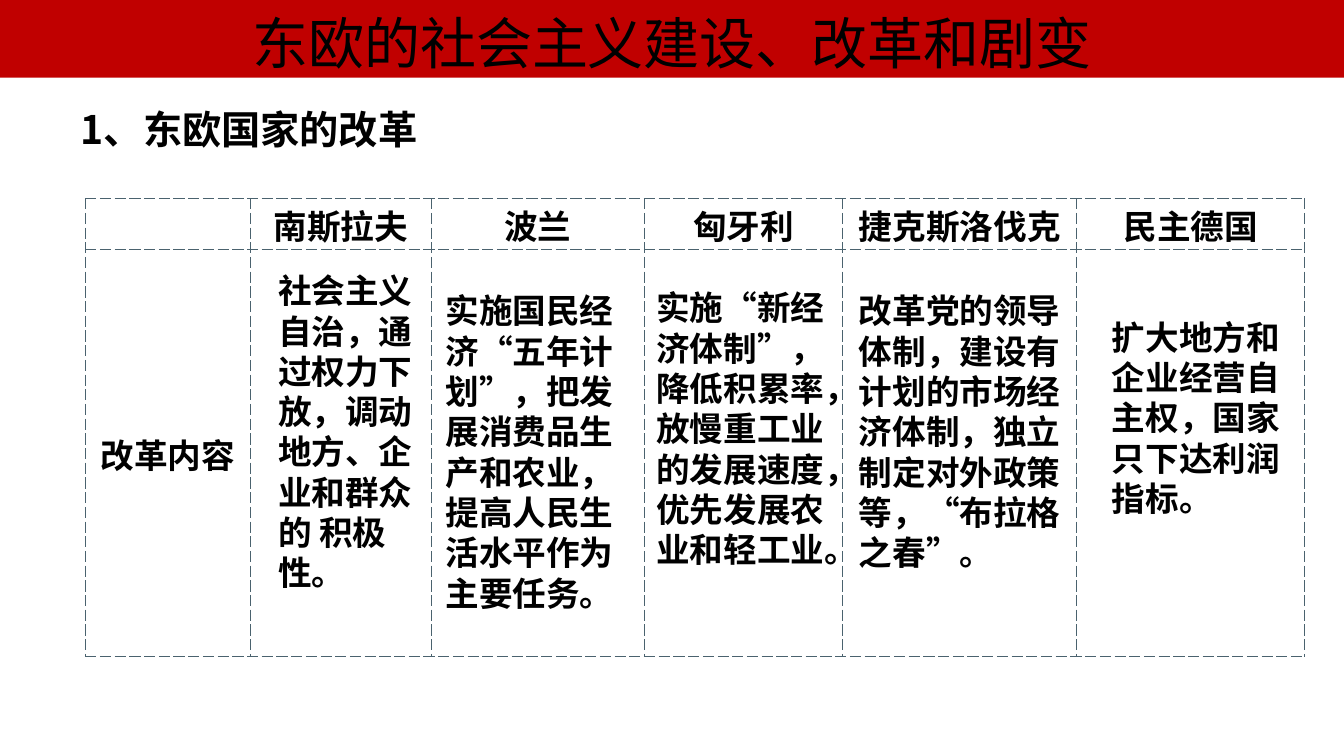
from dataclasses import dataclass
from lxml import etree
from pptx import Presentation
from pptx.dml.color import RGBColor as Rgb
from pptx.enum.shapes import MSO_SHAPE as Shape
from pptx.enum.text import MSO_ANCHOR as Anchor, PP_ALIGN as Align
from pptx.oxml.ns import qn
from pptx.util import Pt

SCALE = 9144  # EMU per px, 100 px to the inch


@dataclass(frozen=True)
class Theme:
    font: str = "Noto Sans CJK SC"
    ink: str = "000000"
    band: str = "C00000"
    paper: str = "FFFFFF"
    rule: str = "4A626E"
    title: int = 40
    head: int = 28
    body: int = 24
    lead: float = 1.2


def px(num):
    return num * SCALE


class Deck:
    def __init__(self, theme):
        self.theme = theme
        self.prs = Presentation()
        self.prs.slide_width, self.prs.slide_height = px(1333), px(750)
        self.slide = self.prs.slides.add_slide(self.prs.slide_layouts[6])

    def label(self, frame, words, size, bold=True, align=Align.CENTER):
        para = frame.paragraphs[0]
        para.alignment = align
        para.line_spacing = Pt(size * self.theme.lead)
        run = para.add_run()
        run.text = words
        font = run.font
        font.size, font.bold = Pt(size), bold
        font.color.rgb = Rgb.from_string(self.theme.ink)
        font.name = self.theme.font
        east = etree.SubElement(font._element, qn("a:ea"))
        east.set("typeface", self.theme.font)

    def inset(self, frame):
        frame.word_wrap = True
        frame.vertical_anchor = Anchor.TOP
        frame.margin_left = frame.margin_right = px(10)
        frame.margin_top, frame.margin_bottom = px(8), px(2)

    def text(self, box, words, size, align=Align.LEFT):
        frame = self.slide.shapes.add_textbox(*map(px, box)).text_frame
        self.inset(frame)
        self.label(frame, words, size, align=align)

    def band(self, box, words):
        bar = self.slide.shapes.add_shape(Shape.RECTANGLE, *map(px, box))
        bar.shadow.inherit = False
        bar.fill.solid()
        bar.fill.fore_color.rgb = Rgb.from_string(self.theme.band)
        bar.line.fill.background()
        self.inset(bar.text_frame)
        self.label(bar.text_frame, words, self.theme.title, bold=False)

    def edge(self, cell):
        props = cell._tc.get_or_add_tcPr()
        for spot, side in enumerate("LRTB"):
            line = etree.Element(qn(f"a:ln{side}"), w=str(Pt(0.75)))
            fill = etree.SubElement(line, qn("a:solidFill"))
            etree.SubElement(fill, qn("a:srgbClr"), val=self.theme.rule)
            etree.SubElement(line, qn("a:prstDash"), val="sysDash")
            props.insert(spot, line)

    def table(self, left, top, cols, rows, cells):
        grid = self.slide.shapes.add_table(
            len(rows), len(cols), px(left), px(top),
            px(sum(cols)), px(sum(rows))).table
        grid.first_row = grid.horz_banding = False
        for col, wide in zip(grid.columns, cols):
            col.width = px(wide)
        for row, high in zip(grid.rows, rows):
            row.height = px(high)
        for cell in grid.iter_cells():
            cell.fill.solid()
            cell.fill.fore_color.rgb = Rgb.from_string(self.theme.paper)
            cell.margin_top, cell.margin_bottom = px(10), 0
            self.edge(cell)
        for (row, col), words in cells.items():
            cell = grid.cell(row, col)
            cell.vertical_anchor = Anchor.MIDDLE if row else Anchor.TOP
            self.label(cell.text_frame, words, self.theme.body)


def main():
    theme = Theme()
    deck = Deck(theme)

    # Section heading
    deck.text((41, 97, 412, 57), "1、东欧国家的改革", theme.head, Align.CENTER)

    # Reform table
    lands = ["南斯拉夫", "波兰", "匈牙利", "捷克斯洛伐克", "民主德国"]
    cells = {(0, col): land for col, land in enumerate(lands, 1)}
    cells[1, 0] = "改革内容"
    deck.table(85, 197, [163, 180, 211, 197, 232, 226], [50, 404], cells)

    # Title band
    deck.band((0, 0, 1333, 77), "东欧的社会主义建设、改革和剧变")

    # Reforms of each country
    notes = [
        ((266, 260, 154, 373),
         "社会主义自治，通过权力下放，调动地方、企业和群众的 积极性。"),
        ((432, 280, 195, 333),
         "实施国民经济“五年计划”，把发展消费品生产和农业，"
         "提高人民生活水平作为主要任务。"),
        ((641, 277, 189, 293),
         "实施“新经济体制”，降低积累率，放慢重工业的发展速度，"
         "优先发展农业和轻工业。"),
        ((842, 280, 223, 293),
         "改革党的领导体制，建设有计划的市场经济体制，"
         "独立制定对外政策等，“布拉格之春”。"),
        ((1093, 306, 189, 212),
         "扩大地方和企业经营自主权，国家只下达利润指标。"),
    ]
    for box, words in notes:
        deck.text(box, words, theme.body)

    deck.prs.save("out.pptx")


if __name__ == "__main__":
    main()
